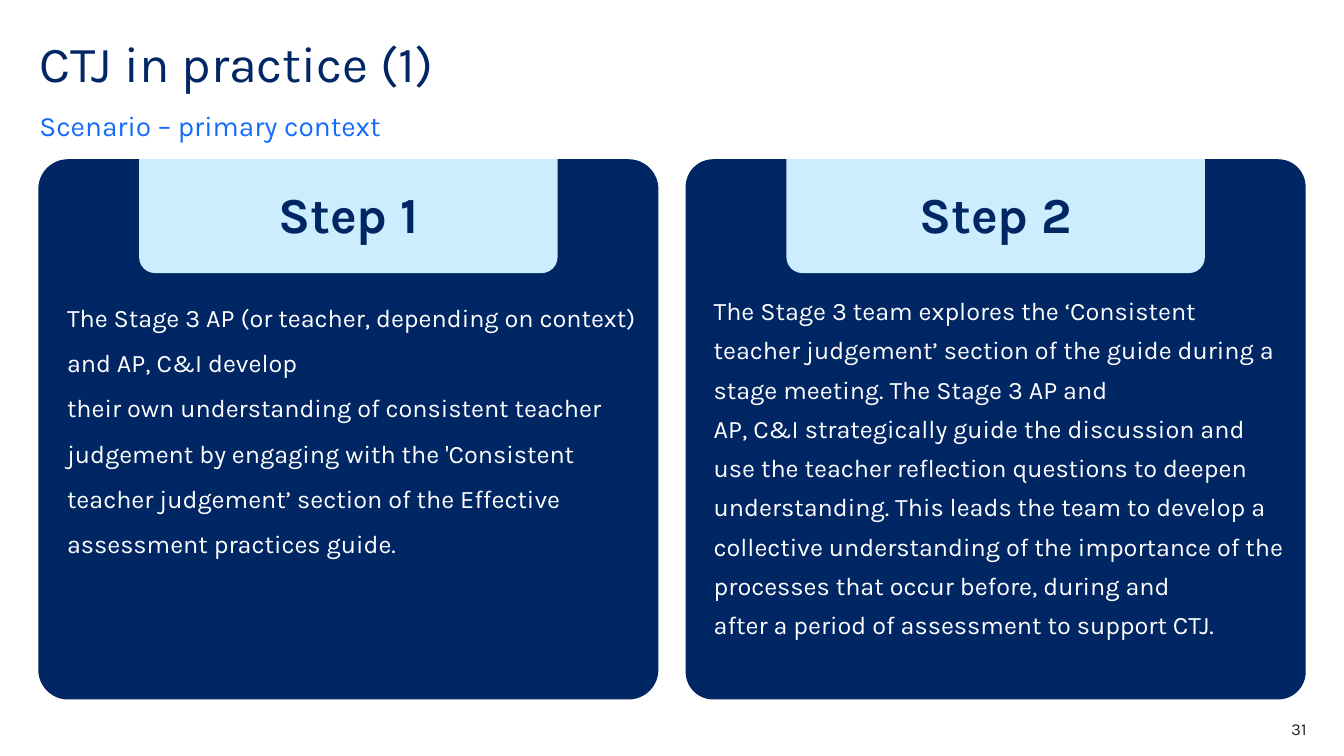
from lxml import etree
from pptx import Presentation
from pptx.dml.color import RGBColor
from pptx.enum.shapes import MSO_SHAPE
from pptx.enum.text import MSO_ANCHOR, MSO_AUTO_SIZE, PP_ALIGN
from pptx.oxml.ns import qn
from pptx.util import Inches, Pt

ROUNDED = MSO_SHAPE.ROUNDED_RECTANGLE
BOTTOM_ROUNDED = MSO_SHAPE.ROUND_2_SAME_RECTANGLE
TOP, MIDDLE, BOTTOM = MSO_ANCHOR.TOP, MSO_ANCHOR.MIDDLE, MSO_ANCHOR.BOTTOM
LEFT, CENTER, RIGHT = PP_ALIGN.LEFT, PP_ALIGN.CENTER, PP_ALIGN.RIGHT

FONT = "Karla"
COLORS = {"navy": "002664", "blue": "146CFD", "sky": "CBEDFD",
          "white": "FFFFFF", "ink": "22272B"}


def write_text(shape, lines, size, color, align=LEFT, anchor=TOP,
               insets=(0, 0, 0, 0), spacing=1.0, after=0, bold=False):
    """Fill the shape with one paragraph and return that paragraph."""
    frame = shape.text_frame
    frame.word_wrap = True
    frame.auto_size = MSO_AUTO_SIZE.NONE
    frame.vertical_anchor = anchor
    (frame.margin_left, frame.margin_top,
     frame.margin_right, frame.margin_bottom) = [Inches(inset) for inset in insets]
    paragraph = frame.paragraphs[0]
    paragraph.alignment = align
    paragraph.line_spacing = spacing
    paragraph.space_before = Pt(0)
    paragraph.space_after = Pt(after)
    for index, line in enumerate(lines):
        if index:
            paragraph.add_line_break()
        run = paragraph.add_run()
        run.text = line
        run.font.name = FONT
        run.font.size = Pt(size)
        run.font.bold = bold
        run.font.color.rgb = RGBColor.from_string(COLORS[color])
    return paragraph


def add_panel(group, kind, left, top, width, height, color):
    """Add a plain filled shape without line or shadow."""
    shape = group.shapes.add_shape(kind, Inches(left), Inches(top),
                                   Inches(width), Inches(height))
    shape.shadow.inherit = False
    shape.fill.solid()
    shape.fill.fore_color.rgb = RGBColor.from_string(COLORS[color])
    shape.line.fill.background()
    return shape


presentation = Presentation()
presentation.slide_width = Inches(13.33)
presentation.slide_height = Inches(7.5)
slide = presentation.slides.add_slide(presentation.slide_layouts[1])

# Title and subtitle
title, subtitle = slide.shapes.title, slide.placeholders[1]
for placeholder, top, height in ((title, 0.39, 0.6), (subtitle, 1.07, 0.34)):
    placeholder.left, placeholder.top = Inches(0.39), Inches(top)
    placeholder.width, placeholder.height = Inches(11.02), Inches(height)
write_text(title, ["CTJ in practice (1)"], 36, "navy", spacing=0.9)
paragraph = write_text(subtitle, ["Scenario – primary context"], 20, "blue",
                       anchor=BOTTOM, spacing=1.5, after=12)
properties = paragraph._p.get_or_add_pPr()
properties.set("marL", "0")
properties.set("indent", "0")
etree.SubElement(properties, qn("a:buNone"))

# Step cards: heading, corner, line spacing, space after, text lines
CARD_LEFT, CARD_TOP, CARD_STEP = 0.38, 1.58, 6.42
steps = [
    ("Step 1", 0.055, 1.5, 12, [
        "The Stage 3 AP (or teacher, depending on context) and AP, C&I develop ",
        "their own understanding of consistent teacher judgement by engaging with "
        "the 'Consistent teacher judgement’ section of the Effective assessment "
        "practices guide."]),
    ("Step 2", 0.051, 1.3, 0, [
        "The Stage 3 team explores the ‘Consistent teacher judgement’ section of "
        "the guide during a stage meeting. The Stage 3 AP and ",
        "AP, C&I strategically guide the discussion and use the teacher reflection "
        "questions to deepen understanding. This leads the team to develop a "
        "collective understanding of the importance of the processes that occur "
        "before, during and ",
        "after a period of assessment to support CTJ."]),
]
for index, (heading, corner, spacing, after, lines) in enumerate(steps):
    left = CARD_LEFT + index * CARD_STEP
    group = slide.shapes.add_group_shape()
    card = add_panel(group, ROUNDED, left, CARD_TOP, 6.15, 5.36, "navy")
    card.adjustments[0] = corner
    paragraph = write_text(card, lines, 18, "white", insets=(0.1, 1.18, 0.1, 0.05),
                           spacing=spacing, after=after)
    paragraph._p.get_or_add_pPr().set("marL", str(Inches(0.1)))

    tab = add_panel(group, BOTTOM_ROUNDED, left + 1, CARD_TOP, 4.15, 1.13, "sky")
    tab.adjustments[0] = 0
    tab.adjustments[1] = 0.14
    write_text(tab, [heading], 36, "navy", CENTER, MIDDLE,
               insets=(0.1, 0.05, 0.1, 0.05), bold=True)

# Page number
page_number = slide.shapes.add_textbox(Inches(12.17), Inches(7.13),
                                       Inches(0.79), Inches(0.2))
write_text(page_number, ["31"], 12, "ink", RIGHT)

presentation.save("out.pptx")
